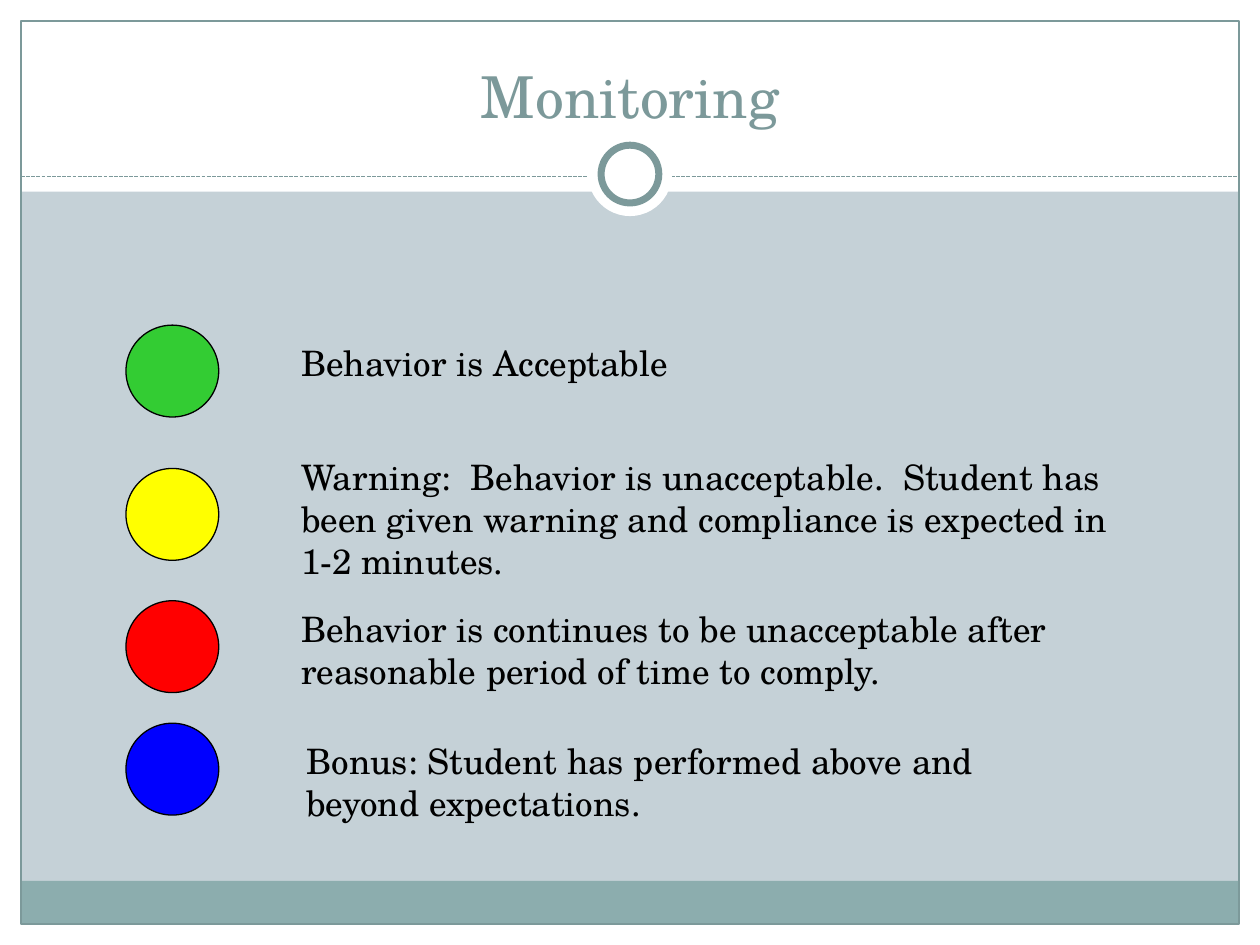
from dataclasses import dataclass
from typing import Optional

from lxml.etree import SubElement
from pptx import Presentation
from pptx.dml.color import RGBColor
from pptx.enum.dml import MSO_LINE
from pptx.enum.shapes import MSO_CONNECTOR, MSO_SHAPE
from pptx.enum.text import MSO_ANCHOR, MSO_AUTO_SIZE, PP_ALIGN
from pptx.oxml.ns import qn
from pptx.slide import Slide
from pptx.util import Pt


@dataclass(frozen=True)
class Theme:
    font: str = "TeX Gyre Schola"
    title_size: float = 33
    body_size: float = 20
    background: str = "C5D1D7"
    paper: str = "FFFFFF"
    accent: str = "7C999A"
    footer: str = "8CADAE"
    ink: str = "000000"
    hairline: float = 0.75
    ring_line: float = 4


@dataclass(frozen=True)
class Box:
    left: float
    top: float
    width: float
    height: float

    def lengths(self) -> tuple:
        return Pt(self.left), Pt(self.top), Pt(self.width), Pt(self.height)


@dataclass(frozen=True)
class Panel:
    box: Box
    fill: Optional[str]
    line: Optional[str] = None
    line_width: float = 0.75
    kind: MSO_SHAPE = MSO_SHAPE.RECTANGLE


@dataclass(frozen=True)
class Level:
    color: str
    dot_top: float
    meaning: str
    text_box: Box


THEME = Theme()
WIDTH, HEIGHT, MARGIN = 720, 540, 12
HEADER_HEIGHT = 109.5
RULE_TOP = 101
RING_CENTER = 99.5
DOT_LEFT, DOT_WIDTH, DOT_HEIGHT = 72, 53, 52.5
TEXT_LEFT = 165

LEVELS = (
    Level("33CC33", 185.8, "Behavior is Acceptable", Box(TEXT_LEFT, 191.5, 278, 31.5)),
    Level("FFFF00", 267.7,
          "Warning:  Behavior is unacceptable.  Student has been given warning "
          "and compliance is expected in 1-2 minutes.",
          Box(TEXT_LEFT, 256.5, 483, 79)),
    Level("FF0000", 343.3,
          "Behavior is continues to be unacceptable after reasonable period of time to comply.",
          Box(TEXT_LEFT, 343.5, 483, 55.5)),
    Level("0000FF", 413.3,
          "Bonus: Student has performed above and beyond expectations.",
          Box(168, 419, 440.5, 91.5)),
)


def rgb(color: str) -> RGBColor:
    return RGBColor.from_string(color)


def centered_circle(diameter: float) -> Box:
    return Box((WIDTH - diameter) / 2, RING_CENTER - diameter / 2, diameter, diameter)


def draw_panel(slide: Slide, panel: Panel) -> None:
    shape = slide.shapes.add_shape(panel.kind, *panel.box.lengths())
    shape.shadow.inherit = False
    if panel.fill:
        shape.fill.solid()
        shape.fill.fore_color.rgb = rgb(panel.fill)
    else:
        shape.fill.background()
    if panel.line:
        shape.line.color.rgb = rgb(panel.line)
        shape.line.width = Pt(panel.line_width)
    else:
        shape.line.fill.background()


def draw_rule(slide: Slide) -> None:
    rule = slide.shapes.add_connector(
        MSO_CONNECTOR.STRAIGHT, Pt(MARGIN), Pt(RULE_TOP), Pt(WIDTH - MARGIN), Pt(RULE_TOP))
    rule.line.color.rgb = rgb(THEME.accent)
    rule.line.width = Pt(THEME.hairline)
    rule.line.dash_style = MSO_LINE.SQUARE_DOT
    SubElement(rule._element.spPr, qn("a:effectLst"))


def draw_frame(slide: Slide) -> None:
    margins = (
        Box(0, HEIGHT - MARGIN, WIDTH, MARGIN),
        Box(0, 0, WIDTH, HEADER_HEIGHT),
        Box(0, 0, MARGIN, HEIGHT),
        Box(WIDTH - MARGIN, 0, MARGIN, HEIGHT),
    )
    for margin in margins:
        draw_panel(slide, Panel(margin, THEME.paper))
    draw_panel(slide, Panel(Box(MARGIN, 503.3, WIDTH - 2 * MARGIN, 24.7), THEME.footer))
    border = Box(MARGIN, MARGIN, WIDTH - 2 * MARGIN, HEIGHT - 2 * MARGIN)
    draw_panel(slide, Panel(border, None, THEME.accent))
    draw_rule(slide)
    draw_panel(slide, Panel(centered_circle(48), THEME.paper, kind=MSO_SHAPE.OVAL))
    draw_panel(slide, Panel(centered_circle(33), THEME.paper, THEME.accent,
                            THEME.ring_line, MSO_SHAPE.OVAL))


def style_paragraph(paragraph, size: float, color: str) -> None:
    paragraph.font.name = THEME.font
    paragraph.font.size = Pt(size)
    paragraph.font.color.rgb = rgb(color)


def write_title(slide: Slide, wording: str) -> None:
    title = slide.shapes.title
    title.left, title.top, title.width, title.height = Box(24, 18, 672, 60).lengths()
    title.text_frame.text = wording
    title.text_frame.vertical_anchor = MSO_ANCHOR.BOTTOM
    title.text_frame.auto_size = MSO_AUTO_SIZE.NONE
    heading = title.text_frame.paragraphs[0]
    heading.alignment = PP_ALIGN.CENTER
    style_paragraph(heading, THEME.title_size, THEME.accent)
    slide.shapes._spTree.append(title._element)


def draw_dot(slide: Slide, level: Level) -> None:
    dot = Box(DOT_LEFT, level.dot_top, DOT_WIDTH, DOT_HEIGHT)
    draw_panel(slide, Panel(dot, level.color, THEME.ink, kind=MSO_SHAPE.OVAL))


def write_meaning(slide: Slide, level: Level) -> None:
    frame = slide.shapes.add_textbox(*level.text_box.lengths()).text_frame
    frame.word_wrap = True
    frame.auto_size = MSO_AUTO_SIZE.SHAPE_TO_FIT_TEXT
    frame.text = level.meaning
    style_paragraph(frame.paragraphs[0], THEME.body_size, THEME.ink)


def main() -> None:
    presentation = Presentation()
    presentation.slide_width, presentation.slide_height = Pt(WIDTH), Pt(HEIGHT)
    slide = presentation.slides.add_slide(presentation.slide_layouts[5])
    slide.background.fill.solid()
    slide.background.fill.fore_color.rgb = rgb(THEME.background)
    draw_frame(slide)
    write_title(slide, "Monitoring")
    for level in LEVELS:
        draw_dot(slide, level)
    for level in LEVELS:
        write_meaning(slide, level)
    presentation.save("out.pptx")


if __name__ == "__main__":
    main()
